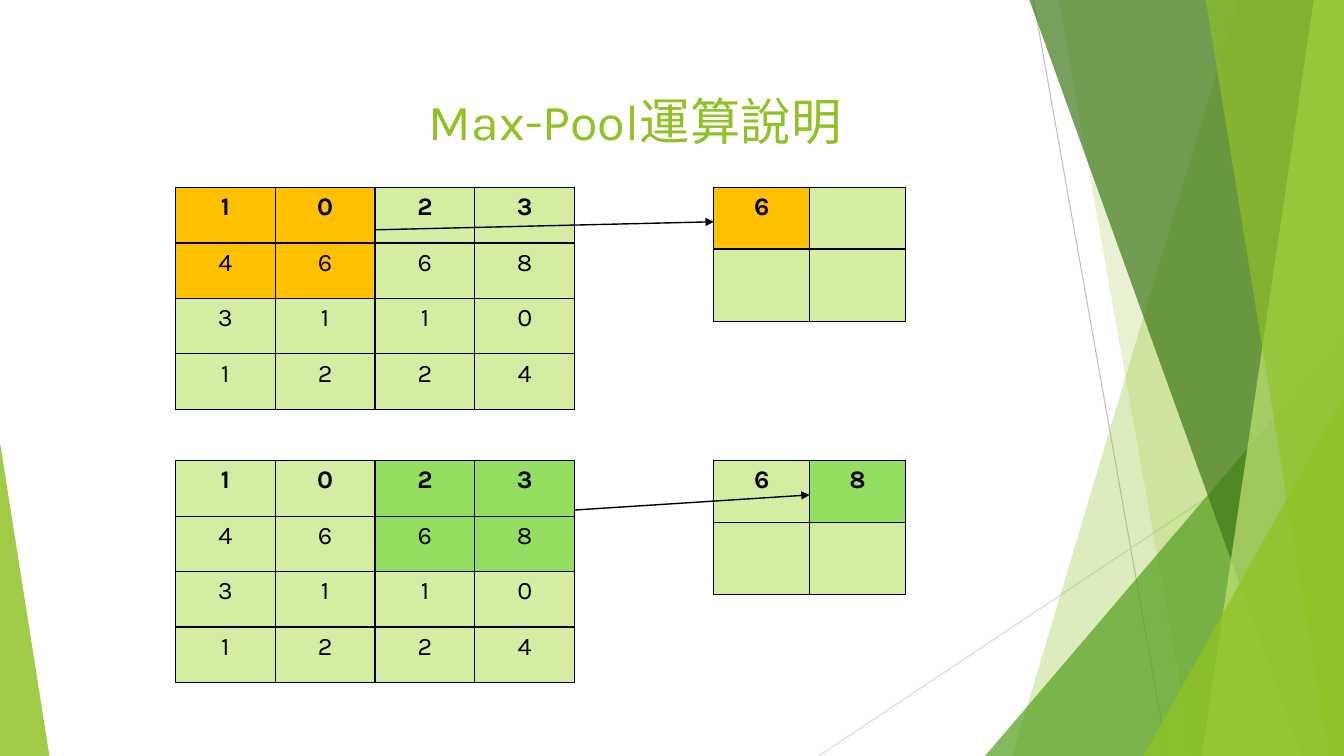
from pptx import Presentation
from pptx.dml.color import RGBColor
from pptx.enum.shapes import MSO_CONNECTOR, MSO_SHAPE
from pptx.enum.text import MSO_ANCHOR, PP_ALIGN
from pptx.oxml.ns import qn
from pptx.util import Inches, Pt
from lxml.etree import SubElement

FONT = "Karla"
BLACK = RGBColor(0x00, 0x00, 0x00)
LEAF = RGBColor(0x90, 0xC2, 0x26)
GRASS = RGBColor(0x54, 0xA0, 0x21)
FOREST = RGBColor(0x3F, 0x78, 0x19)
LIME = RGBColor(0xC0, 0xE4, 0x74)
CELL = RGBColor(0xD5, 0xED, 0xA2)
ORANGE = RGBColor(0xFF, 0xC0, 0x00)
GREEN = RGBColor(0x94, 0xDE, 0x61)
GREY = RGBColor(0xBF, 0xBF, 0xBF)
LIGHT_GREY = RGBColor(0xD9, 0xD9, 0xD9)

WIDTH, HEIGHT = 13.33, 7.5
MATRIX = ["1023", "4668", "3110", "1224"]


def paint(sp, color, opacity):
    """Fill a shape with a see-through colour and no outline."""
    sp.shadow.inherit = False
    sp.line.fill.background()
    sp.fill.solid()
    sp.fill.fore_color.rgb = color
    clr = sp.element.spPr.find(qn("a:solidFill"))[0]
    SubElement(clr, qn("a:alpha")).set("val", str(opacity * 1000))


def add_line(s, start, end, color, width, arrow=False):
    points = [Inches(v) for v in (*start, *end)]
    line = s.shapes.add_connector(MSO_CONNECTOR.STRAIGHT, *points)
    line.line.color.rgb = color
    line.line.width = Pt(width)
    if arrow:
        SubElement(line.line._get_or_add_ln(), qn("a:tailEnd")).set("type", "triangle")
    SubElement(line.element.spPr, qn("a:effectLst"))


def add_band(s, top, bottom, color, opacity):
    """Band from a slanted left edge to the right edge of the slide."""
    corners = [(WIDTH, 0), (WIDTH, HEIGHT), (bottom, HEIGHT)]
    builder = s.shapes.build_freeform(Inches(top), 0)
    builder.add_line_segments([(Inches(x), Inches(y)) for x, y in corners])
    paint(builder.convert_to_shape(), color, opacity)


def add_corner(s, left, top, width, peak, color, opacity):
    """Triangle standing on the bottom edge of the slide."""
    sp = s.shapes.add_shape(MSO_SHAPE.ISOSCELES_TRIANGLE, Inches(left), Inches(top),
                            Inches(width), Inches(HEIGHT - top))
    sp.adjustments[0] = peak
    paint(sp, color, opacity)


def add_backdrop(s):
    add_line(s, (10.25, 0), (11.58, HEIGHT), GREY, 0.75)
    add_line(s, (WIDTH, 4.03), (8.12, HEIGHT), LIGHT_GREY, 0.75)
    add_band(s, 12.28, 10.04, LEAF, 30)
    add_band(s, 10.5, 11.83, LEAF, 20)
    add_corner(s, 9.77, 3.33, 3.56, 1, GRASS, 72)
    add_band(s, 10.21, 12.91, FOREST, 70)
    add_band(s, 13.03, 11.92, LIME, 70)
    add_band(s, 11.96, 13.18, LEAF, 65)
    add_corner(s, 11.34, 3.93, 1.99, 1, LEAF, 80)
    add_corner(s, 0, 4.39, 0.49, 0, LEAF, 85)


def format_text(p, size, color, bold=False):
    p.alignment = PP_ALIGN.CENTER
    for r in p.runs:
        r.font.name = FONT
        r.font.size = Pt(size)
        r.font.bold = bold
        r.font.color.rgb = color


def add_title(s, left, top, width, height, text):
    tf = s.shapes.add_textbox(Inches(left), Inches(top), Inches(width), Inches(height)).text_frame
    tf.word_wrap = True
    tf.vertical_anchor = MSO_ANCHOR.TOP
    p = tf.paragraphs[0]
    p.text = text
    format_text(p, 36, LEAF)


def add_borders(cell):
    tcPr = cell._tc.get_or_add_tcPr()
    for side in ("a:lnL", "a:lnR", "a:lnT", "a:lnB"):
        ln = SubElement(tcPr, qn(side), w=str(Pt(1)))
        fill = SubElement(ln, qn("a:solidFill"))
        SubElement(fill, qn("a:srgbClr"), val=str(BLACK))


def add_grid(s, left, top, col_width, row_heights, values, marked, color):
    """Number table; the (row, column) cells in marked get the highlight colour."""
    rows, cols = len(values), len(values[0])
    table = s.shapes.add_table(rows, cols, Inches(left), Inches(top), Inches(col_width * cols),
                               Inches(sum(row_heights))).table
    table.horz_banding = False
    for column in table.columns:
        column.width = Inches(col_width)
    for i, row in enumerate(table.rows):
        row.height = Inches(row_heights[i])
        for j, cell in enumerate(row.cells):
            add_borders(cell)
            cell.fill.solid()
            cell.fill.fore_color.rgb = color if (i, j) in marked else CELL
            p = cell.text_frame.paragraphs[0]
            p.text = values[i][j].strip()
            format_text(p, 18, BLACK, bold=i == 0)


def add_pooling_step(s, left, top, first_col, result, color, start, end):
    """Input matrix, pooled result and the arrow between them, given from the top left."""
    window = [(i, first_col + j) for i in range(2) for j in range(2)]
    add_grid(s, left, top, 0.99, [0.55] * 4, MATRIX, window, color)
    add_grid(s, left + 5.34, top, 0.95, [0.61, 0.72], [result, "  "],
             [(0, first_col // 2)], color)
    add_line(s, (left + start[0], top + start[1]), (left + end[0], top + end[1]),
             BLACK, 1, arrow=True)


def main():
    prs = Presentation()
    prs.slide_width, prs.slide_height = Inches(WIDTH), Inches(HEIGHT)
    s = prs.slides.add_slide(prs.slide_layouts[6])
    add_backdrop(s)
    add_title(s, 1.6, 0.84, 9.4, 1.3, "Max-Pool運算說明")
    add_pooling_step(s, 1.74, 1.86, 0, "6 ", ORANGE, (1.98, 0.42), (5.34, 0.34))
    add_pooling_step(s, 1.74, 4.57, 2, "68", GREEN, (3.96, 0.49), (6.29, 0.34))
    prs.save("out.pptx")


if __name__ == "__main__":
    main()
